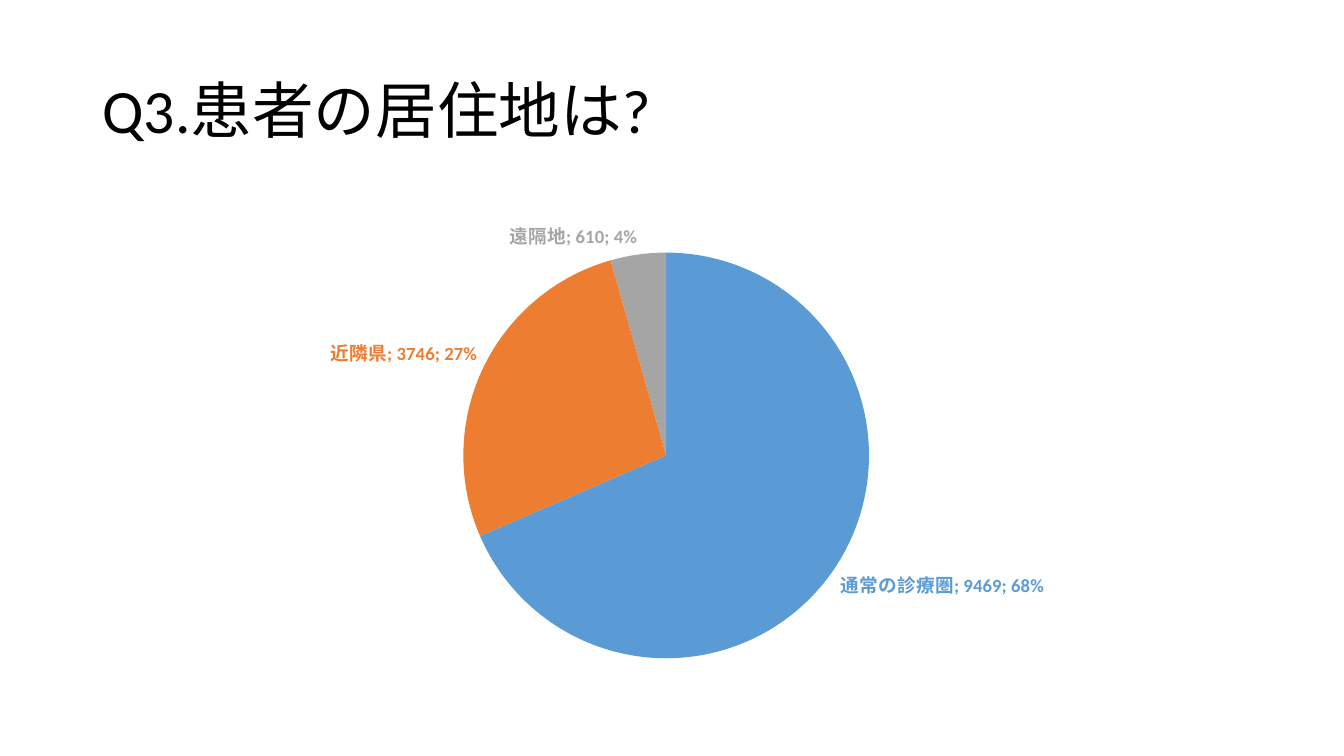
"""Build the slide with a pie chart of where patients live."""
from lxml import etree
from pptx import Presentation
from pptx import util as u
from pptx.chart.data import CategoryChartData
from pptx.dml.color import RGBColor
from pptx.enum import chart as ch, text
from pptx.oxml.ns import qn

BLACK = RGBColor(0x00, 0x00, 0x00)
BLUE = RGBColor(0x5B, 0x9B, 0xD5)
ORANGE = RGBColor(0xED, 0x7D, 0x31)
GRAY = RGBColor(0xA5, 0xA5, 0xA5)
FONT = "Calibri"
LEFT, WIDTH = u.Cm(2.33), u.Cm(29.21)


def write(frame, content, size, color, align=text.PP_ALIGN.LEFT, spacing=0.9):
    frame.text = content
    paragraph = frame.paragraphs[0]
    paragraph.alignment, paragraph.line_spacing = align, spacing
    font = paragraph.runs[0].font
    font.name, font.size, font.color.rgb = FONT, u.Pt(size), color


def add_element(parent, tag, value=None):
    element = etree.SubElement(parent, qn(tag))
    if value is not None:
        element.set("val", str(value))
    return element


prs = Presentation()
prs.slide_width, prs.slide_height = u.Cm(33.87), u.Cm(19.05)
slide = prs.slides.add_slide(prs.slide_layouts[5])

question = slide.shapes.title
question.left, question.top = LEFT, u.Cm(1.01)
question.width, question.height = WIDTH, u.Cm(3.68)
question.text_frame.vertical_anchor = text.MSO_ANCHOR.MIDDLE
write(question.text_frame, "Q3.患者の居住地は?", size=44, color=BLACK)

residences = [("通常の診療圏", 9469, BLUE), ("近隣県", 3746, ORANGE), ("遠隔地", 610, GRAY)]
data = CategoryChartData()
data.categories = [area for area, _, _ in residences]
data.add_series("患者数", [patients for _, patients, _ in residences])
pie = slide.shapes.add_chart(
    ch.XL_CHART_TYPE.PIE, LEFT, u.Cm(5.07), WIDTH, u.Cm(12.09), data).chart
pie.has_legend = False
pie.has_title = False
pie.font.name, pie.font.size = FONT, u.Pt(13.3)
pie.plots[0].vary_by_categories = True

patients_series = pie.plots[0].series[0]
for index, (_, _, color) in enumerate(residences):
    point = patients_series.points[index]
    point.format.fill.solid()
    point.format.fill.fore_color.rgb = color
    font = point.data_label.font
    font.name, font.size, font.bold = FONT, u.Pt(13.3), True
    font.color.rgb = color
    point.data_label.position = ch.XL_LABEL_POSITION.OUTSIDE_END

for label in patients_series._element.iter(qn("c:dLbl")):
    for flag in ("c:showVal", "c:showCatName", "c:showPercent"):
        label.find(qn(flag)).set("val", "1")
    add_element(label, "c:separator").text = "; "

plot_area = pie._chartSpace.find(".//" + qn("c:plotArea"))
for layout in plot_area.findall(qn("c:layout")):
    plot_area.remove(layout)
layout = add_element(plot_area, "c:layout")
plot_area.insert(0, layout)
manual = add_element(layout, "c:manualLayout")
for tag, value in (("layoutTarget", "inner"), ("xMode", "edge"), ("yMode", "edge"),
                   ("x", 0.32), ("y", 0.1), ("w", 0.35), ("h", 0.86)):
    add_element(manual, "c:" + tag, value)

prs.save("out.pptx")
